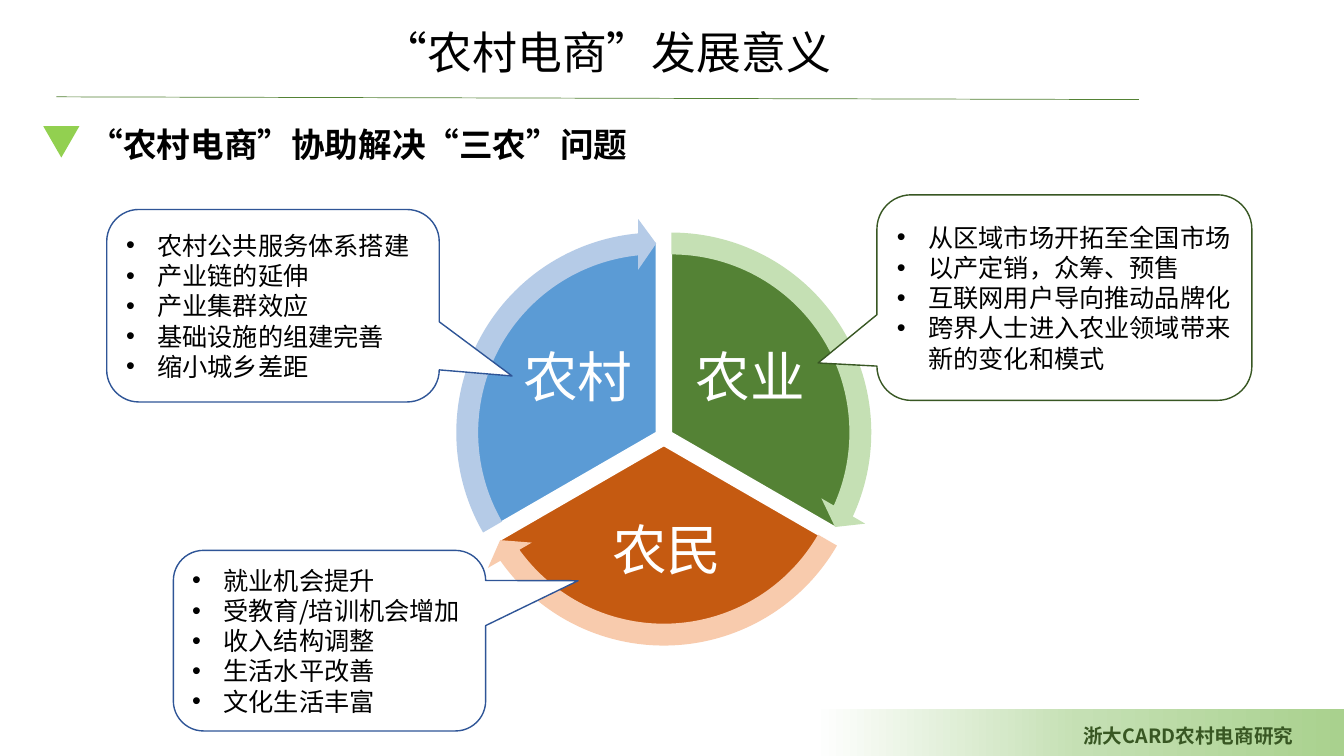
"""Build the slide on how rural e-commerce helps farming, farmers and villages."""
from math import cos, radians, sin

from copy import deepcopy
from lxml.etree import SubElement
from pptx import Presentation
from pptx.dml.color import RGBColor
from pptx.enum.shapes import MSO_CONNECTOR, MSO_SHAPE
from pptx.enum.text import MSO_ANCHOR, PP_ALIGN
from pptx.oxml.ns import qn
from pptx.util import Cm, Pt

THEME = {
    "font": "Noto Sans CJK SC",
    "black": "000000", "white": "FFFFFF", "mark": "92D050",
    "rule": "548235", "dark": "385723", "navy": "2F5597",
    "fade": [(0, "A9D18E"), (0.5, "C5E0B4"), (1, "FFFFFF")],
    "title": 32, "head": 24, "label": 39, "body": 18, "foot": 14,
}

TEXTS = [
    ("浙大CARD农村电商研究", (27.05, 18.11, 6.83, 0.86), "foot", "dark", True),
    ("“农村电商”发展意义", (9.4, 0.51, 13.61, 1.63), "title", "black", False),
    ("“农村电商”协助解决“三农”问题", (2.01, 3, 15.72, 1.27), "head", "black", True),
]

SECTORS = [
    ("农业", "548235", "C5E0B4", (17.2, 8.13, 3.43, 2.87)),
    ("农民", "C55A11", "F8CBAD", (14.22, 12.67, 5.16, 2.51)),
    ("农村", "5B9BD5", "B5CBE7", (12.85, 8.13, 3.43, 2.87)),
]
HUB = (16.73, 11.01)
GAP, PIE, RING = 0.22, 9.6, 10.8
SWEEP, TIP = 120, 5.46
DEGREE = 0.6

NOTES = [
    ((22.1, 4.91, 9.45, 5.18), (-0.657, 0.318), "dark", [
        "从区域市场开拓至全国市场",
        "以产定销，众筹、预售",
        "互联网用户导向推动品牌化",
        "跨界人士进入农业领域带来新的变化和模式",
    ]),
    ((2.69, 5.28, 8.38, 4.85), (0.719, 0.365), "navy", [
        "农村公共服务体系搭建",
        "产业链的延伸",
        "产业集群效应",
        "基础设施的组建完善",
        "缩小城乡差距",
    ]),
    ((4.37, 13.87, 7.87, 4.55), (0.796, -0.332), "navy", [
        "就业机会提升",
        "受教育/培训机会增加",
        "收入结构调整",
        "生活水平改善",
        "文化生活丰富",
    ]),
]


def tint(code):
    return RGBColor.from_string(code)


def write(para, text, size, color, bold=False):
    run = para.add_run()
    run.text = text
    font = run.font
    font.size, font.bold = Pt(THEME[size]), bold
    font.color.rgb = tint(THEME[color])
    font.name = THEME["font"]
    SubElement(font._element, qn("a:ea"), typeface=THEME["font"])


def shape(slide, kind, box, fill=None, line=None, adjust=()):
    item = slide.shapes.add_shape(kind, *map(Cm, box))
    item.shadow.inherit = False
    if fill:
        item.fill.solid()
        item.fill.fore_color.rgb = tint(fill)
    if line:
        item.line.color.rgb = tint(line)
        item.line.width = Pt(1)
    else:
        item.line.fill.background()
    for spot, value in enumerate(adjust):
        item.adjustments[spot] = value
    return item


def label(slide, box):
    frame = slide.shapes.add_textbox(*map(Cm, box)).text_frame
    frame.word_wrap = True
    return frame


def band(slide):
    fill = shape(slide, MSO_SHAPE.RECTANGLE, (20.52, 17.86, 13.35, 1.19)).fill
    fill.gradient()
    fill.gradient_angle = 180
    first = fill.gradient_stops[0]._gs
    first.addnext(deepcopy(first))
    for stop, (place, code) in zip(fill.gradient_stops, THEME["fade"]):
        stop.position = place
        stop.color.rgb = tint(code)


def rule(slide):
    line = slide.shapes.add_connector(
        MSO_CONNECTOR.STRAIGHT, Cm(1.42), Cm(2.44), Cm(28.7), Cm(2.51))
    line.line.color.rgb = tint(THEME["rule"])
    line.line.width = Pt(0.5)
    SubElement(line._element.spPr, qn("a:effectLst"))


def wheel(slide):
    rings = []
    for turn, (name, fill, pale, box) in enumerate(SECTORS):
        start = 270 + turn * SWEEP
        end, mid = start + SWEEP, radians(start + SWEEP / 2)
        x, y = HUB[0] + GAP * cos(mid), HUB[1] + GAP * sin(mid)
        begin, stop = start % 360 * DEGREE, end % 360 * DEGREE
        shape(slide, MSO_SHAPE.PIE, (x - PIE / 2, y - PIE / 2, PIE, PIE),
              fill, THEME["white"], (begin, stop))
        rings.append(((x - RING / 2, y - RING / 2, RING, RING), pale,
                      (0.051, TIP * DEGREE, stop - TIP * DEGREE, begin, 0.059)))
        frame = label(slide, box)
        frame.vertical_anchor = MSO_ANCHOR.MIDDLE
        frame.margin_left = frame.margin_right = Cm(0.13)
        frame.margin_top = frame.margin_bottom = Cm(0.13)
        para = frame.paragraphs[0]
        para.alignment, para.line_spacing = PP_ALIGN.CENTER, 0.9
        write(para, name, "label", "white")
    for box, pale, adjust in rings:
        shape(slide, MSO_SHAPE.CIRCULAR_ARROW, box, pale, None, adjust)


def note(slide, box, tail, line, items):
    frame = shape(slide, MSO_SHAPE.ROUNDED_RECTANGULAR_CALLOUT, box,
                  THEME["white"], THEME[line], (*tail, 0.167)).text_frame
    frame.word_wrap = True
    frame.vertical_anchor = MSO_ANCHOR.MIDDLE
    for rank, text in enumerate(items):
        para = frame.add_paragraph() if rank else frame.paragraphs[0]
        para.alignment = PP_ALIGN.LEFT
        props = para._p.get_or_add_pPr()
        props.set("marL", str(Cm(0.79)))
        props.set("indent", str(-Cm(0.79)))
        SubElement(props, qn("a:buFont"), typeface="Arial")
        SubElement(props, qn("a:buChar"), char="•")
        write(para, text, "body", "black")


def main():
    deck = Presentation()
    deck.slide_width, deck.slide_height = Cm(33.87), Cm(19.05)
    slide = deck.slides.add_slide(deck.slide_layouts[6])
    band(slide)
    rule(slide)
    for text, box, size, color, bold in TEXTS:
        write(label(slide, box).paragraphs[0], text, size, color, bold)
    wheel(slide)
    mark = shape(slide, MSO_SHAPE.ISOSCELES_TRIANGLE,
                 (1.09, 3.18, 0.91, 0.79), THEME["mark"])
    mark.rotation = 180
    for entry in NOTES:
        note(slide, *entry)
    deck.save("out.pptx")


if __name__ == "__main__":
    main()
